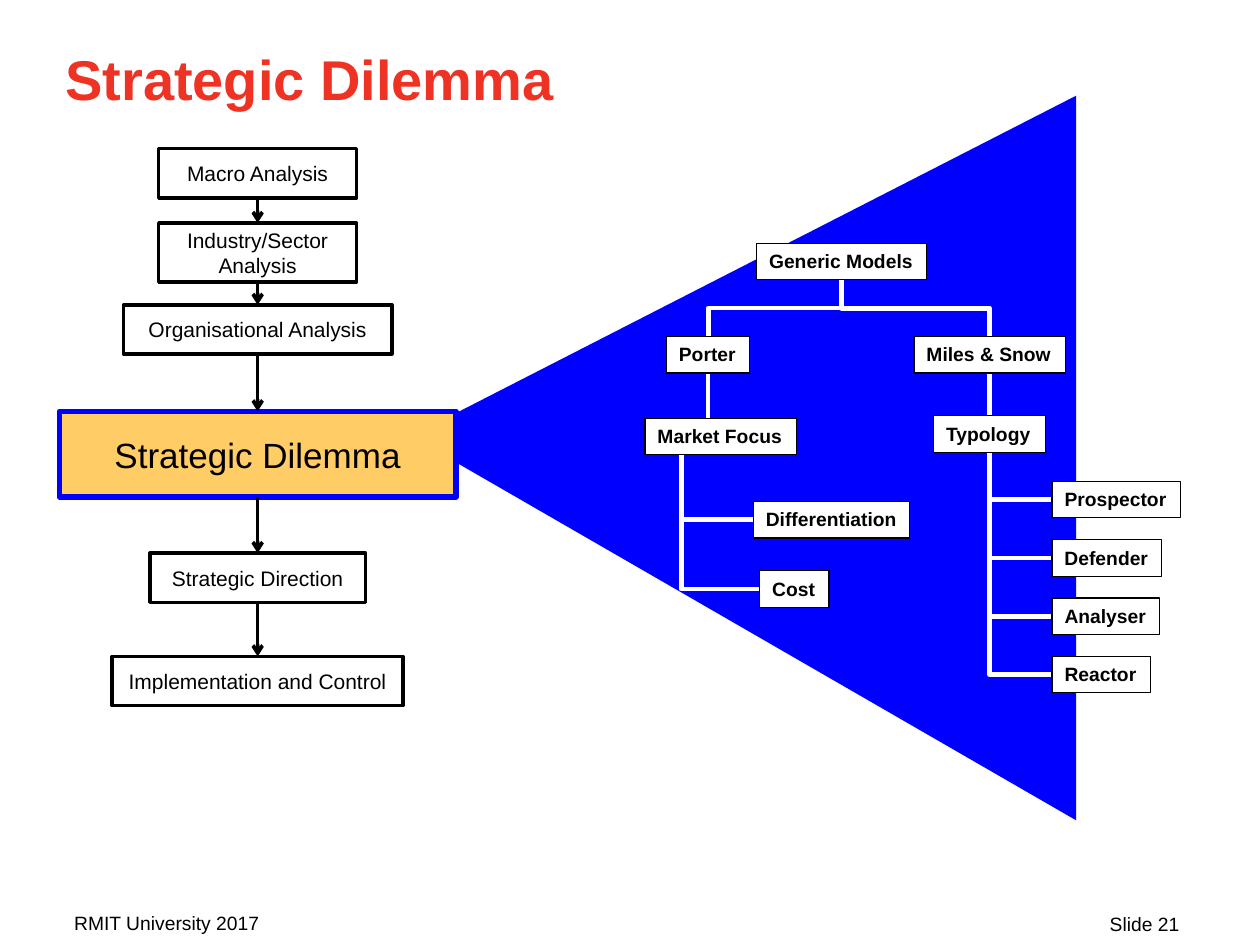
import pptx
import pptx.util
import pptx.dml.color
import pptx.enum.shapes
import pptx.enum.text
import pptx.oxml.ns
import lxml.etree

COLUMNS, ROWS = 100, 75
WIDTH, HEIGHT = pptx.util.Inches(10), pptx.util.Inches(7.5)
COLORS = {"heading": "EE3224", "ink": "000000", "paper": "FFFFFF",
          "funnel": "0000FF", "focus": "FFCC66"}
ALIGN = pptx.enum.text.PP_ALIGN
ANCHOR = pptx.enum.text.MSO_ANCHOR
FIT = pptx.enum.text.MSO_AUTO_SIZE
CONNECTOR = pptx.enum.shapes.MSO_CONNECTOR
LABEL_ROWS = 2.9

FONTS = {
    "heading": {"name": "Arial", "size": pptx.util.Pt(32), "bold": True},
    "footer": {"name": "Arial", "size": pptx.util.Pt(11)},
    "model": {"name": "Arial", "size": pptx.util.Pt(11), "bold": True},
    "step": {"name": "Arial", "size": pptx.util.Pt(12)},
    "focus": {"name": "Arial", "size": pptx.util.Pt(20)},
}
FRAMES = {
    "heading": {"word_wrap": True},
    "footer": {"word_wrap": True},
    "model": {"word_wrap": False, "auto_size": FIT.SHAPE_TO_FIT_TEXT,
              "vertical_anchor": ANCHOR.TOP},
    "step": {"word_wrap": True, "vertical_anchor": ANCHOR.MIDDLE},
    "focus": {"word_wrap": True, "vertical_anchor": ANCHOR.MIDDLE},
}
BORDERS = {"model": ("ink", 0.75), "step": ("ink", 2), "focus": ("funnel", 3)}


def color(name):
    """Return the named colour."""
    return pptx.dml.color.RGBColor.from_string(COLORS[name])


def emu(x, y):
    """Turn columns and rows into slide lengths."""
    return round(x * WIDTH / COLUMNS), round(y * HEIGHT / ROWS)


def apply(target, values):
    """Set each format value on the target."""
    for name, value in values.items():
        setattr(target, name, value)


def write(holder, text, style, align=ALIGN.LEFT):
    """Write one styled paragraph into a shape."""
    apply(holder.text_frame, FRAMES[style])
    paragraph = holder.text_frame.paragraphs[0]
    paragraph.text = text
    paragraph.alignment = align
    apply(paragraph.font, FONTS[style])
    paragraph.font.color.rgb = color("heading" if style == "heading" else "ink")


def add_caption(slide, box, text, style, align=ALIGN.LEFT):
    """Add plain text that fills the box."""
    caption = slide.shapes.add_textbox(*emu(*box[:2]), *emu(*box[2:]))
    write(caption, text, style, align)


def add_panel(slide, box, text, style, align):
    """Add a bordered rectangle with text that fills the box."""
    panel = slide.shapes.add_shape(
        pptx.enum.shapes.MSO_SHAPE.RECTANGLE, *emu(*box[:2]), *emu(*box[2:]))
    panel.shadow.inherit = False
    panel.fill.solid()
    panel.fill.fore_color.rgb = color("focus" if style == "focus" else "paper")
    border, points = BORDERS[style]
    panel.line.color.rgb = color(border)
    panel.line.width = pptx.util.Pt(points)
    write(panel, text, style, align)


def add_link(slide, start, end, ink, points, kind=CONNECTOR.STRAIGHT):
    """Add a connector without a shadow."""
    link = slide.shapes.add_connector(kind, *emu(*start), *emu(*end))
    link.line.color.rgb = color(ink)
    link.line.width = pptx.util.Pt(points)
    lxml.etree.SubElement(link._element.spPr, pptx.oxml.ns.qn("a:effectLst"))
    return link


def add_arrow(slide, start, end):
    """Add a black arrow between two steps."""
    outline = add_link(slide, start, end, "ink", 2).line._get_or_add_ln()
    lxml.etree.SubElement(outline, pptx.oxml.ns.qn("a:tailEnd"), type="arrow")


def add_fork(slide, parent, child):
    """Join a parent's foot to a child's top, turning halfway down."""
    (px, py), (cx, cy) = parent, child
    mid_x, mid_y = (px + cx) / 2, (py + cy) / 2
    run, drop = (cx - px) / 2, (cy - py) / 2
    fork = add_link(slide, (mid_x - drop, mid_y + run),
                    (mid_x + drop, mid_y - run), "paper", 2.75, CONNECTOR.ELBOW)
    fork._element.spPr.find(pptx.oxml.ns.qn("a:xfrm")).set("rot", str(90 * 60000))


def add_branch(slide, trunk, leaf):
    """Join a leaf's left side to a trunk with one corner."""
    branch = add_link(slide, leaf, trunk, "paper", 2.75, CONNECTOR.ELBOW)
    geometry = branch._element.spPr.find(pptx.oxml.ns.qn("a:prstGeom"))
    geometry.set("prst", "bentConnector2")


def add_funnel(slide, box):
    """Add the triangle that opens from the dilemma to the models."""
    left, top, width, height = box
    corners = [emu(left + width, top), emu(left, top + 0.47 * height),
               emu(left + width, top + height)]
    builder = slide.shapes.build_freeform(*corners[0])
    builder.add_line_segments(corners[1:], close=True)
    funnel = builder.convert_to_shape()
    funnel.shadow.inherit = False
    funnel.fill.solid()
    funnel.fill.fore_color.rgb = color("funnel")
    funnel.line.fill.background()


def add_process(slide, box):
    """Add the centred chain of analysis steps and its arrows."""
    left, top, width, _ = box
    center = left + width / 2
    steps = [
        ("Macro Analysis", 0, 15.7, 3.9, "step"),
        ("Industry/Sector Analysis", 5.9, 15.7, 4.7, "step"),
        ("Organisational Analysis", 12.4, 21.3, 3.9, "step"),
        ("Strategic Dilemma", 20.85, width, 6.8, "focus"),
        ("Strategic Direction", 32.1, 17.1, 3.9, "step"),
        ("Implementation and Control", 40.3, 23.1, 3.9, "step"),
    ]
    for text, row, span, rows, style in steps:
        add_panel(slide, (center - span / 2, top + row, span, rows),
                  text, style, ALIGN.CENTER)
    for (_, row, _, rows, _), (_, following, *_) in zip(steps, steps[1:]):
        add_arrow(slide, (center, top + row + rows), (center, top + following))


def add_models(slide, box):
    """Add the tree of generic models."""
    left, top, _, _ = box
    places = {
        "Generic Models": (8.85, 0, 13.5),
        "Porter": (1.7, 7.4, 6.6),
        "Miles & Snow": (21.35, 7.4, 12),
        "Market Focus": (0, 13.9, 12),
        "Typology": (22.9, 13.7, 8.9),
        "Differentiation": (8.6, 20.5, 12.4),
        "Cost": (9.1, 26, 5.5),
    }
    types = {"Prospector": 10.2, "Defender": 8.7, "Analyser": 8.5, "Reactor": 7.8}
    for index, (name, span) in enumerate(types.items()):
        places[name] = (32.3, 18.9 + 4.63 * index, span)
    labels = {name: (left + x, top + y, span, LABEL_ROWS)
              for name, (x, y, span) in places.items()}

    def point(name, across, down):
        """Return the point at shares of a label's width and height."""
        x, y, span, rows = labels[name]
        return x + across * span, y + down * rows

    for school, theme, share, leaves in [
            ("Porter", "Market Focus", 0.24, ["Differentiation", "Cost"]),
            ("Miles & Snow", "Typology", 0.5, types)]:
        add_fork(slide, point("Generic Models", 0.5, 1), point(school, 0.5, 0))
        stem_x, stem_y = point(school, 0.5, 1)
        add_link(slide, (stem_x, stem_y), (stem_x, point(theme, 0, 0)[1]),
                 "paper", 2.75)
        for leaf in leaves:
            add_branch(slide, point(theme, share, 1), point(leaf, 0, 0.5))
    for name, place in labels.items():
        add_panel(slide, place, name, "model", ALIGN.LEFT)


def add_footer(slide, box):
    """Add the source on the left and the slide number on the right."""
    left, top, width, height = box
    span = 23.3
    add_caption(slide, (left, top, span, height), "RMIT University 2017", "footer")
    add_caption(slide, (left + width - span, top + 0.1, span, height),
                "Slide 21", "footer", ALIGN.RIGHT)


def main():
    """Build the slide and save it."""
    deck = pptx.Presentation()
    deck.slide_width, deck.slide_height = WIDTH, HEIGHT
    slide = deck.slides.add_slide(deck.slide_layouts[6])
    add_funnel(slide, (32.6, 7.6, 52.8, 57.5))
    add_caption(slide, (4.2, 3, 90, 10.1), "Strategic Dilemma", "heading")
    add_models(slide, (51.2, 19.3, 42.5, 35.7))
    add_process(slide, (4.7, 11.8, 31.5, 44.2))
    add_footer(slide, (4.9, 71.8, 89.7, 2.4))
    deck.save("out.pptx")


if __name__ == "__main__":
    main()
